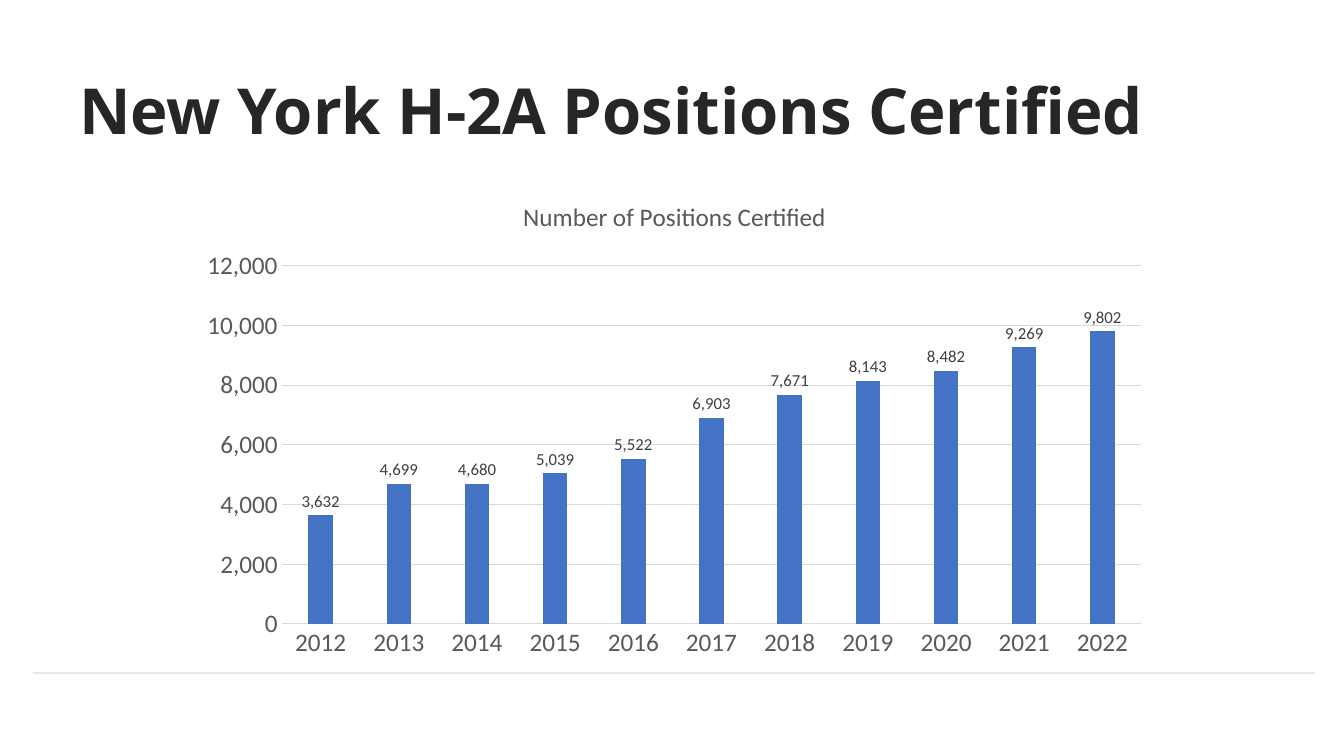
from pptx import Presentation
from pptx.chart.data import CategoryChartData
from pptx.dml.color import RGBColor
from pptx.enum.chart import XL_CHART_TYPE, XL_LABEL_POSITION, XL_TICK_MARK
from pptx.enum.shapes import MSO_CONNECTOR
from pptx.enum.text import MSO_ANCHOR, MSO_AUTO_SIZE, PP_ALIGN
from pptx.oxml import parse_xml
from pptx.oxml.ns import nsdecls
from pptx.util import Pt
from lxml.etree import SubElement

PX = 914400 / 100.8
THEME = {
    "title": {"name": "Noto Sans", "size": Pt(45.3), "bold": True, "color": "262626"},
    "chart": {"name": "Calibri", "size": Pt(10), "bold": False, "color": "000000"},
    "axis": {"name": "Calibri", "size": Pt(18), "bold": False, "color": "595959"},
    "label": {"name": "Calibri", "size": Pt(12), "bold": False, "color": "404040"},
    "bar": "4472C4", "grid": "D9D9D9", "rule": "AFABAB",
}


def px(*lengths):
    return [round(n * PX) for n in lengths]


def set_font(font, style):
    for key, value in THEME[style].items():
        if key == "color":
            font.color.rgb = RGBColor.from_string(value)
        else:
            setattr(font, key, value)


prs = Presentation()
prs.slide_width, prs.slide_height = px(1344, 756)
s = prs.slides.add_slide(prs.slide_layouts[5])

# Footer rule
rule = s.shapes.add_connector(MSO_CONNECTOR.STRAIGHT, *px(33, 673, 1315, 673))
rule.line.width = Pt(0.5)
rule.line.color.rgb = RGBColor.from_string(THEME["rule"])
color = rule.line.fill._xPr.find(".//{*}srgbClr")
SubElement(color, color.tag.replace("srgbClr", "alpha"), val="75000")
rule._element.spPr.append(parse_xml(f"<a:effectLst {nsdecls('a')}/>"))

# Title
title = s.shapes.title
title.left, title.top, title.width, title.height = px(69, 75, 1207, 126)
tf = title.text_frame
tf.auto_size, tf.vertical_anchor, tf.word_wrap = MSO_AUTO_SIZE.NONE, MSO_ANCHOR.TOP, True
p = tf.paragraphs[0]
p.alignment, p.line_spacing = PP_ALIGN.LEFT, 0.9
r = p.add_run()
r.text = "New York H-2A Positions Certified"
set_font(r.font, "title")

# Column chart
data = CategoryChartData(number_format="#,##0")
data.categories = [str(year) for year in range(2012, 2023)]
data.add_series("Series 1", (3632, 4699, 4680, 5039, 5522, 6903,
                             7671, 8143, 8482, 9269, 9802))
chart = s.shapes.add_chart(XL_CHART_TYPE.COLUMN_CLUSTERED,
                           *px(188, 180, 973, 488), data).chart
set_font(chart.font, "chart")
chart.has_legend = False
chart.has_title = True
p = chart.chart_title.text_frame.paragraphs[0]
r = p.add_run()
r.text = "Number of Positions Certified"
set_font(r.font, "axis")
chart.chart_title.include_in_layout = False

# Axes
cat, val = chart.category_axis, chart.value_axis
for axis in (cat, val):
    axis.major_tick_mark = axis.minor_tick_mark = XL_TICK_MARK.NONE
    set_font(axis.tick_labels.font, "axis")
val.minimum_scale, val.maximum_scale, val.major_unit = 0, 12000, 2000
val.tick_labels.number_format = "#,##0"
val.tick_labels.number_format_is_linked = False
val.format.line.fill.background()
for line in (cat.format.line, val.major_gridlines.format.line):
    line.width = Pt(0.75)
    line.color.rgb = RGBColor.from_string(THEME["grid"])

# Bars and value labels
plot = chart.plots[0]
plot.gap_width, plot.overlap, plot.vary_by_categories = 219, -27, False
fill = plot.series[0].format.fill
fill.solid()
fill.fore_color.rgb = RGBColor.from_string(THEME["bar"])
labels = plot.series[0].data_labels
labels.show_value = True
labels.position = XL_LABEL_POSITION.OUTSIDE_END
set_font(labels.font, "label")

prs.save("out.pptx")
